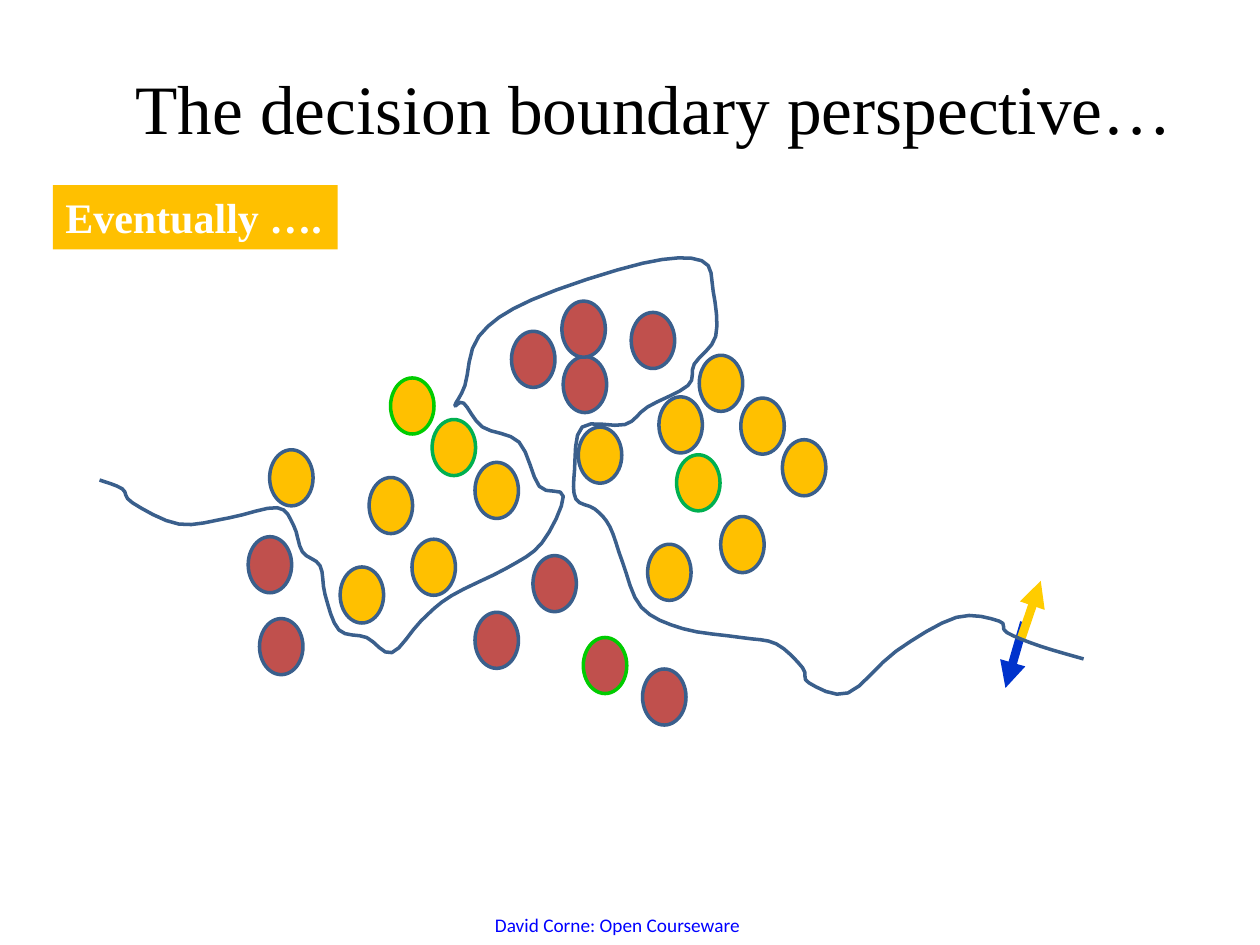
from dataclasses import dataclass

from lxml.etree import SubElement
from pptx import Presentation
from pptx.dml.color import RGBColor
from pptx.enum.shapes import MSO_CONNECTOR as Connector, MSO_SHAPE as Shape
from pptx.enum.text import MSO_ANCHOR as Anchor, MSO_AUTO_SIZE as AutoSize, PP_ALIGN as Align
from pptx.oxml.ns import qn
from pptx.util import Inches, Pt


@dataclass(frozen=True)
class Theme:
    amber: str = "FFC000"
    red: str = "C0504D"
    outline: str = "3A5F8C"
    bright_green: str = "00CC00"
    green: str = "00B050"
    up_arrow: str = "FFCC00"
    down_arrow: str = "0033CC"
    black: str = "000000"
    white: str = "FFFFFF"
    credit: str = "0000FF"
    serif: str = "Times New Roman"
    sans: str = "Calibri"
    title_size: float = 39.6
    label_size: float = 24
    credit_size: float = 11
    thin: float = 2
    thick: float = 5


THEME = Theme()
COLUMNS = 1000
EXAMPLE_SIZE = (34.5, 44.5)
CURVE_STEPS = 4

EXAMPLES = {
    (THEME.amber, THEME.outline): [
        (293, 379), (327, 428), (377, 367), (270, 450), (214, 357), (555, 282), (588, 316),
        (572, 410), (621, 349), (514, 432), (459, 339), (523, 315)],
    (THEME.amber, THEME.green): [(343, 333), (537, 361)],
    (THEME.amber, THEME.bright_green): [(310, 300)],
    (THEME.red, THEME.outline): [
        (510, 531), (406, 263), (206, 491), (197, 426), (501, 248), (447, 283), (377, 486),
        (423, 441), (446, 239)],
    (THEME.red, THEME.bright_green): [(463, 506)],
}

BOUNDARY = [
    (79, 381), (97, 388), (105, 399), (142, 416), (182, 411), (220, 403), (233, 417),
    (240, 438), (254, 449), (258, 472), (269, 500), (291, 506), (311, 518), (334, 493),
    (358, 473), (402, 451), (430, 431), (447, 394), (428, 386), (412, 351), (383, 339),
    (368, 320), (361, 322), (369, 306), (380, 267), (422, 238), (510, 209), (557, 207),
    (566, 231), (568, 267), (551, 289), (546, 306), (514, 323), (496, 337), (462, 339),
    (456, 373), (457, 396), (472, 404), (484, 418), (494, 446), (509, 482), (542, 499),
    (588, 506), (616, 511), (637, 530), (642, 542), (673, 550), (711, 517), (759, 490),
    (793, 493), (799, 502), (826, 513), (860, 523)]


def smooth(points):
    """Return points along a Catmull-Rom curve through the given ones."""
    padded = [points[0], *points, points[-1]]
    curve = [points[0]]
    for before, start, end, after in zip(padded, padded[1:], padded[2:], padded[3:]):
        for step in range(1, CURVE_STEPS + 1):
            t = step / CURVE_STEPS
            curve.append(tuple(
                b + ((c - a) * t + (2 * a - 5 * b + 4 * c - d) * t ** 2
                     + (3 * b - a - 3 * c + d) * t ** 3) / 2
                for a, b, c, d in zip(before, start, end, after)))
    return curve


def write(frame, text, *, font, size, color, bold=False, align=Align.LEFT, anchor=Anchor.TOP,
          wrap=False, fit=AutoSize.SHAPE_TO_FIT_TEXT):
    """Fill a text frame with one formatted paragraph."""
    frame.word_wrap, frame.auto_size, frame.vertical_anchor = wrap, fit, anchor
    paragraph = frame.paragraphs[0]
    paragraph.alignment = align
    run = paragraph.add_run()
    run.text = text
    run.font.name, run.font.size, run.font.bold = font, Pt(size), bold
    run.font.color.rgb = RGBColor.from_string(color)


class Board:
    """Draws styled elements on one slide, placed by square grid units."""

    def __init__(self, deck, theme):
        self.theme = theme
        self.slide = deck.slides.add_slide(deck.slide_layouts[5])
        self.shapes = self.slide.shapes
        self.unit = deck.slide_width / COLUMNS

    def grid(self, *lengths):
        return [round(length * self.unit) for length in lengths]

    def stroke(self, line, color, width):
        line.color.rgb = RGBColor.from_string(color)
        line.width = Pt(width)

    def title(self, text, box):
        heading = self.shapes.title
        heading.left, heading.top, heading.width, heading.height = self.grid(*box)
        write(heading.text_frame, text, font=self.theme.serif, size=self.theme.title_size,
              color=self.theme.black, align=Align.CENTER, anchor=Anchor.MIDDLE, wrap=True,
              fit=AutoSize.NONE)

    def filled(self, preset, box, fill):
        figure = self.shapes.add_shape(preset, *self.grid(*box))
        figure.shadow.inherit = False
        figure.fill.solid()
        figure.fill.fore_color.rgb = RGBColor.from_string(fill)
        figure.line.fill.background()
        return figure

    def example(self, corner, fill, outline):
        dot = self.filled(Shape.OVAL, (*corner, *EXAMPLE_SIZE), fill)
        self.stroke(dot.line, outline, self.theme.thin)

    def label(self, text, box):
        banner = self.filled(Shape.RECTANGLE, box, self.theme.amber)
        write(banner.text_frame, text, font=self.theme.serif, size=self.theme.label_size,
              color=self.theme.white, bold=True)

    def arrow(self, start, end, color):
        pointer = self.shapes.add_connector(Connector.STRAIGHT, *self.grid(*start, *end))
        self.stroke(pointer.line, color, self.theme.thick)
        outline = pointer._element.spPr.find(qn("a:ln"))
        SubElement(outline, qn("a:tailEnd"), type="triangle")
        SubElement(pointer._element.spPr, qn("a:effectLst"))

    def boundary(self, points):
        start, *rest = [self.grid(*point) for point in smooth(points)]
        pen = self.shapes.build_freeform(*start)
        pen.add_line_segments(rest, close=False)
        curve = pen.convert_to_shape()
        curve.shadow.inherit = False
        curve.fill.background()
        self.stroke(curve.line, self.theme.outline, self.theme.thin)

    def credit(self, text, box):
        footer = self.shapes.add_textbox(*self.grid(*box))
        write(footer.text_frame, text, font=self.theme.sans, size=self.theme.credit_size,
              color=self.theme.credit)


def main():
    """Build and save the decision boundary slide."""
    deck = Presentation()
    deck.slide_width, deck.slide_height = Inches(10), Inches(7.5)
    board = Board(deck, THEME)
    board.title("The decision boundary perspective…", (38, 44, 962, 82))
    for (fill, outline), corners in EXAMPLES.items():
        for corner in corners:
            board.example(corner, fill, outline)
    board.arrow((813, 494), (798, 546), THEME.down_arrow)
    board.arrow((810, 508), (826, 461), THEME.up_arrow)
    board.label("Eventually ….", (42, 147, 226, 51))
    board.boundary(BOUNDARY)
    board.credit("David Corne: Open Courseware", (383, 720, 217, 29))
    deck.save("out.pptx")


if __name__ == "__main__":
    main()
